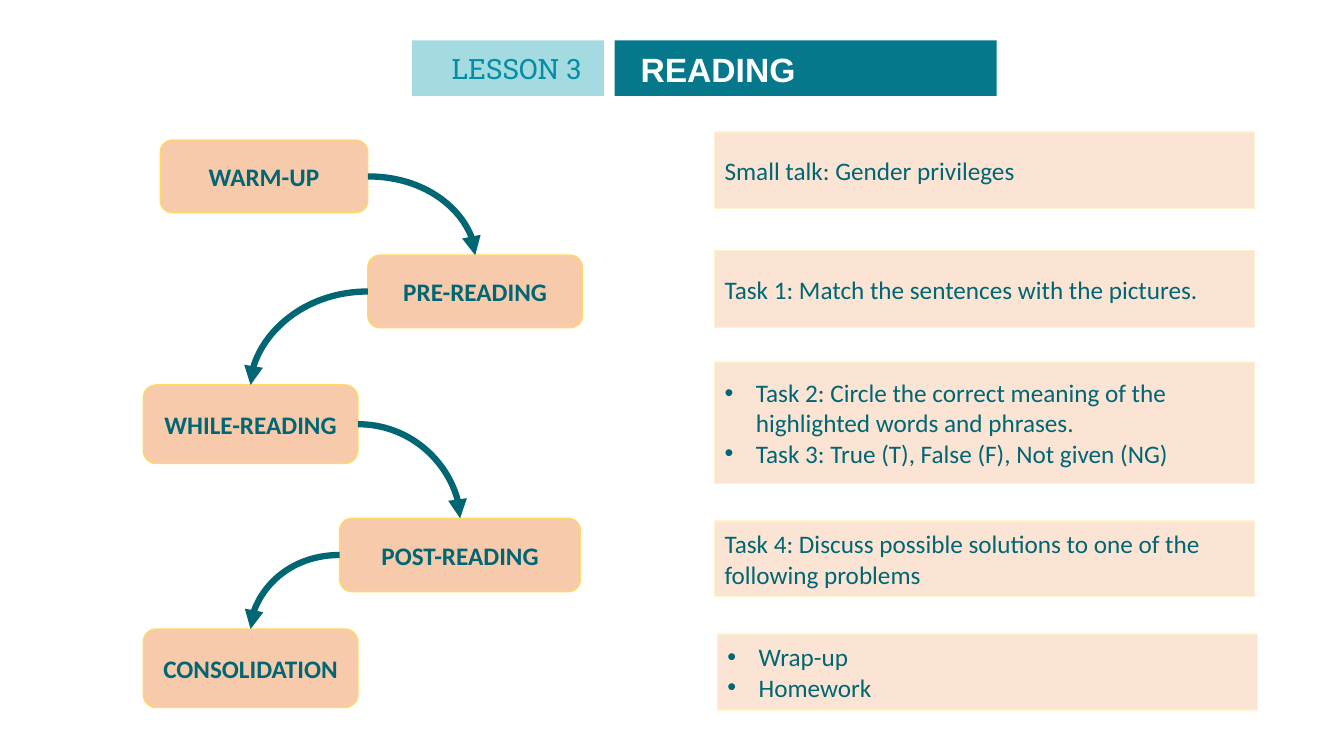
from lxml.etree import SubElement
from pptx import Presentation
from pptx.dml.color import RGBColor
from pptx.enum.shapes import MSO_CONNECTOR as Connector, MSO_SHAPE as Shape
from pptx.enum.text import MSO_ANCHOR as Anchor, MSO_AUTO_SIZE as AutoSize, PP_ALIGN as Align
from pptx.oxml.ns import qn
from pptx.util import Cm, Pt

TEAL = RGBColor(0x00, 0x66, 0x73)
BANNER_TEAL = RGBColor(0x05, 0x78, 0x8C)
LESSON_TEAL = RGBColor(0x04, 0x8D, 0xA4)
AQUA = RGBColor(0xA3, 0xDB, 0xE1)
PEACH = RGBColor(0xF7, 0xCA, 0xAC)
PALE_PEACH = RGBColor(0xFB, 0xE4, 0xD4)
GOLD = RGBColor(0xFF, 0xD9, 0x66)
CREAM = RGBColor(0xFF, 0xF2, 0xCC)
WHITE = RGBColor(0xFF, 0xFF, 0xFF)

LESSON_FONT = {"name": "Roboto Slab", "size": Pt(20)}
TITLE_FONT = {"name": "Arial", "size": Pt(24), "bold": True}
STAGE_FONT = {"name": "Calibri", "size": Pt(18), "bold": True}
TASK_FONT = {"name": "Calibri", "size": Pt(18)}

# Stages: label and box (left, top, width, height) in cm, relative to the flow
STAGES = [
    ("WARM-UP", (0.43, 0, 5.23, 1.83)),
    ("PRE-READING", (5.66, 2.9, 5.41, 1.83)),
    ("WHILE-READING", (0, 6.17, 5.41, 1.98)),
    ("POST-READING", (4.95, 9.53, 6.07, 1.85)),
    ("CONSOLIDATION", (0, 12.32, 5.41, 1.98)),
]

# Tasks: left, top and height in cm relative to the column, lines, bulleted or not
TASKS = [
    (0, 0, 1.93, ["Small talk: Gender privileges"], False),
    (0, 2.99, 1.93, ["Task 1: Match the sentences with the pictures."], False),
    (0, 5.79, 3.07, ["Task 2: Circle the correct meaning of the highlighted words and phrases.",
                     "Task 3: True (T), False (F), Not given (NG)"], True),
    (0, 9.8, 1.91, ["Task 4: Discuss possible solutions to one of the following problems"], False),
    (0.07, 12.65, 1.91, ["Wrap-up", "Homework"], True),
]


def add_box(slide, kind, box, fill, line=None):
    shape = slide.shapes.add_shape(kind, *map(Cm, box))
    shape.shadow.inherit = False
    shape.fill.solid()
    shape.fill.fore_color.rgb = fill
    if line is None:
        shape.line.fill.background()
    else:
        shape.line.color.rgb = line
        shape.line.width = Pt(1)
    return shape


def write_line(paragraph, text, font, color, align):
    paragraph.alignment = align
    run = paragraph.add_run()
    run.text = text
    for name, value in font.items():
        setattr(run.font, name, value)
    run.font.color.rgb = color


def add_bullet(paragraph):
    properties = paragraph._p.get_or_add_pPr()
    indent = Cm(0.79)
    properties.set("marL", str(indent))
    properties.set("indent", str(-indent))
    color = SubElement(properties, qn("a:buClr"))
    SubElement(color, qn("a:srgbClr"), val=str(TEAL))
    SubElement(properties, qn("a:buFont"), typeface="Arial")
    SubElement(properties, qn("a:buChar"), char="•")


def add_label(slide, box, text, font, color):
    label = slide.shapes.add_textbox(*map(Cm, box))
    label.text_frame.word_wrap = True
    label.text_frame.auto_size = AutoSize.SHAPE_TO_FIT_TEXT
    write_line(label.text_frame.paragraphs[0], text, font, color, Align.CENTER)


def add_header(slide, left, top):
    # Lesson number
    add_box(slide, Shape.RECTANGLE, (left, top, 4.83, 1.4), AQUA)
    add_label(slide, (left - 1.83, top + 0.15, 8.92, 1.12), "LESSON 3", LESSON_FONT, LESSON_TEAL)
    # Lesson title
    add_box(slide, Shape.RECTANGLE, (left + 5.1, top, 9.63, 1.4), BANNER_TEAL)
    add_label(slide, (left + 5.43, top + 0.1, 4.55, 1.27), "READING", TITLE_FONT, WHITE)


def add_arrow(slide, source, target, source_side):
    arrow = slide.shapes.add_connector(Connector.CURVE, 0, 0, 0, 0)
    arrow.begin_connect(source, source_side)
    arrow.end_connect(target, 0)
    arrow.line.color.rgb = TEAL
    arrow.line.width = Pt(4.5)
    properties = arrow._element.spPr
    properties.find(qn("a:prstGeom")).set("prst", "curvedConnector2")
    SubElement(arrow.line._get_or_add_ln(), qn("a:tailEnd"), type="triangle")
    SubElement(properties, qn("a:effectLst"))


def add_stage_flow(slide, left, top):
    stages = []
    for label, (x, y, width, height) in STAGES:
        stage = add_box(slide, Shape.ROUNDED_RECTANGLE, (left + x, top + y, width, height), PEACH, GOLD)
        stage.text_frame.vertical_anchor = Anchor.MIDDLE
        write_line(stage.text_frame.paragraphs[0], label, STAGE_FONT, TEAL, Align.CENTER)
        stages.append(stage)
    # Arrows leave the side that faces the next stage
    for source, target in zip(stages, stages[1:]):
        add_arrow(slide, source, target, 3 if target.left > source.left else 1)


def add_task_column(slide, left, top, width):
    for x, y, height, lines, bulleted in TASKS:
        panel = add_box(slide, Shape.RECTANGLE, (left + x, top + y, width, height), PALE_PEACH, CREAM)
        frame = panel.text_frame
        frame.vertical_anchor = Anchor.MIDDLE
        for index, text in enumerate(lines):
            paragraph = frame.add_paragraph() if index else frame.paragraphs[0]
            write_line(paragraph, text, TASK_FONT, TEAL, Align.LEFT)
            if bulleted:
                add_bullet(paragraph)


def main():
    presentation = Presentation()
    presentation.slide_width = Cm(33.87)
    presentation.slide_height = Cm(19.05)
    slide = presentation.slides.add_slide(presentation.slide_layouts[6])
    add_header(slide, 10.39, 1.02)
    add_stage_flow(slide, 3.61, 3.53)
    add_task_column(slide, 18.01, 3.33, 13.61)
    presentation.save("out.pptx")


if __name__ == "__main__":
    main()
